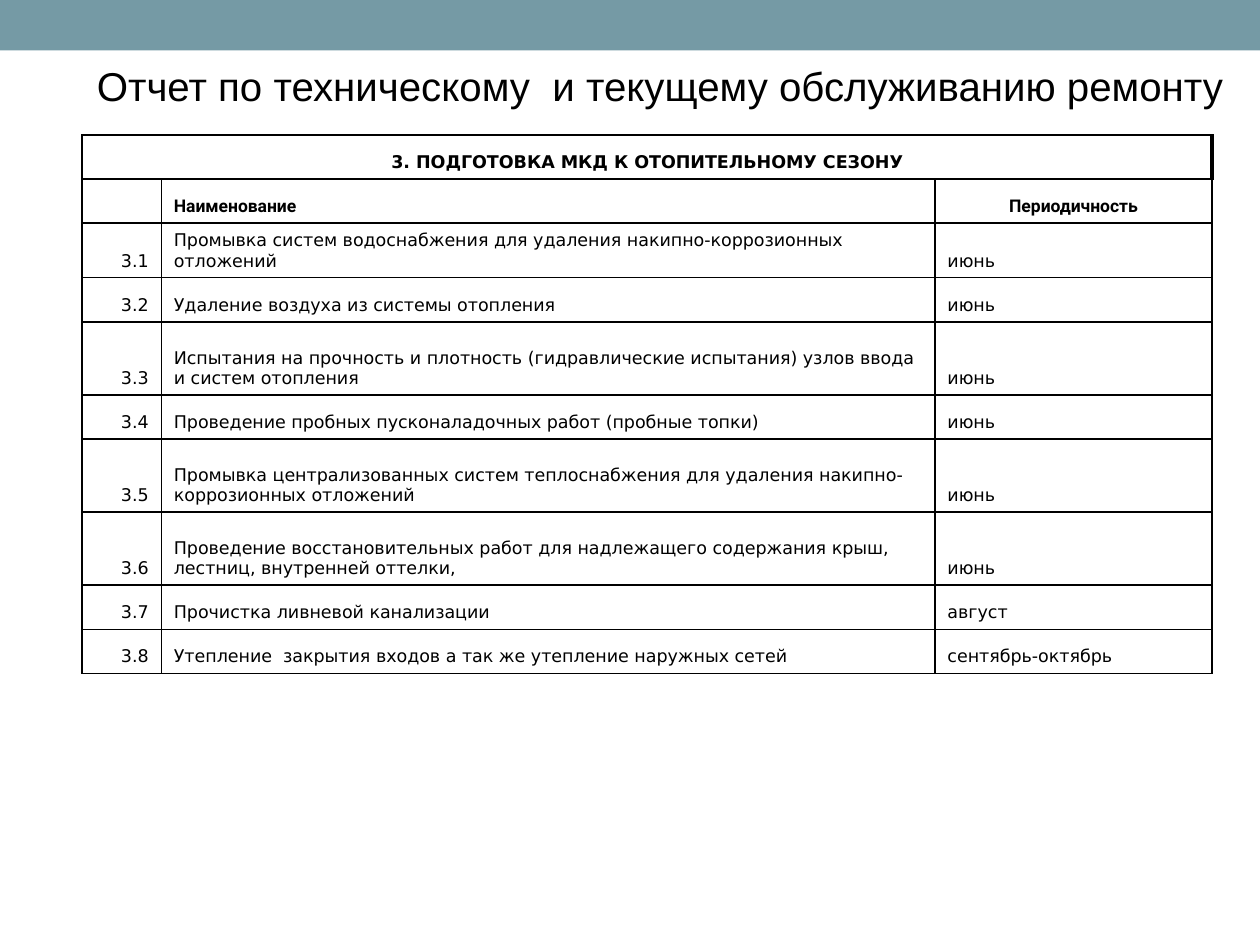
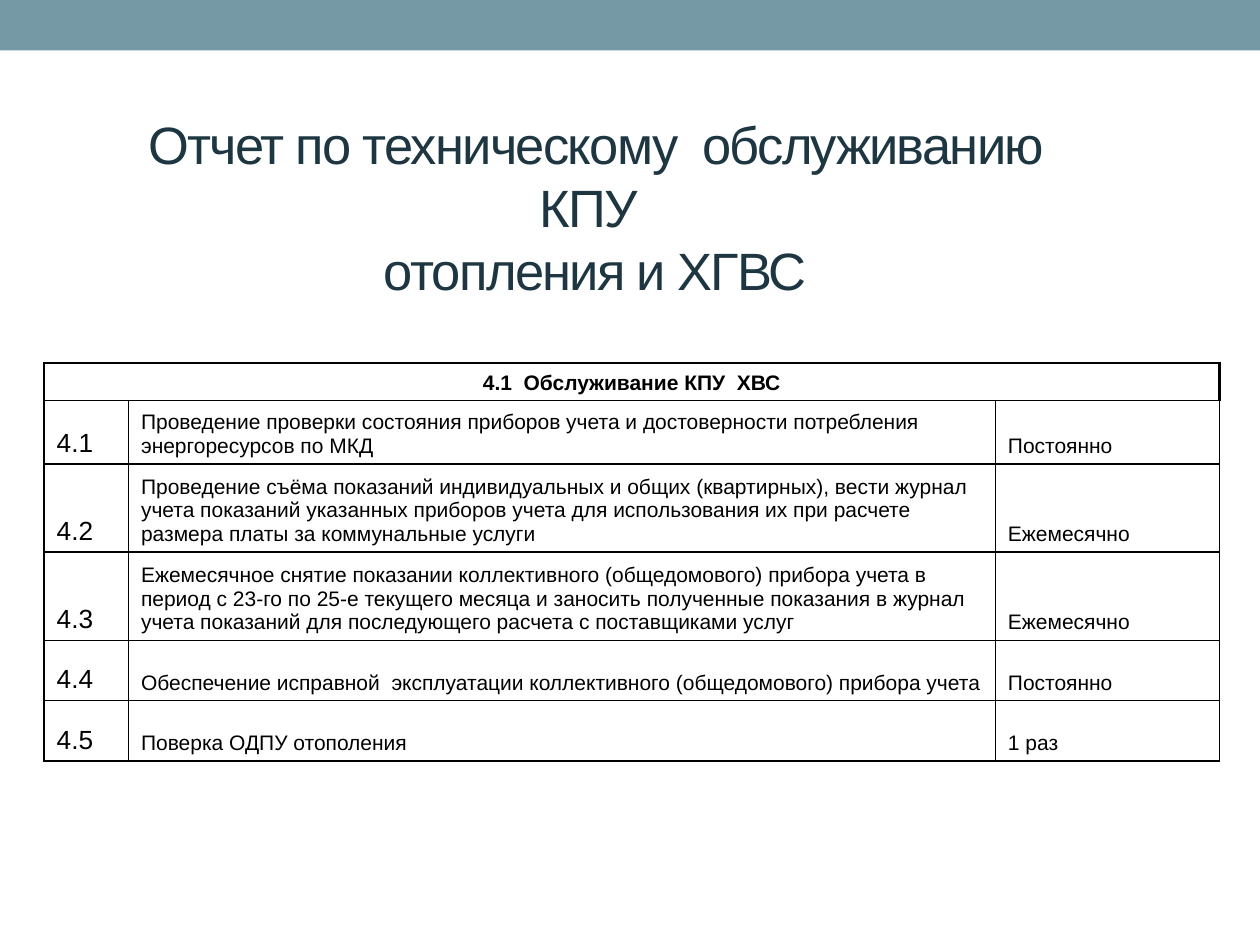
from dataclasses import dataclass

from lxml import etree
from pptx import Presentation
from pptx import util as u
from pptx.dml.color import RGBColor
from pptx.enum import shapes, text
from pptx.oxml.ns import qn

LEFT, CENTER, RIGHT = text.PP_ALIGN.LEFT, text.PP_ALIGN.CENTER, text.PP_ALIGN.RIGHT


@dataclass(frozen=True)
class Theme:
    band: str = "759AA5"
    ink: str = "000000"
    title_ink: str = "1D3641"
    sans: str = "Arial"
    table_sans: str = "DejaVu Sans"
    header_sans: str = "Roboto"
    title_small: float = 23
    title_large: float = 30
    small: float = 10
    body: float = 12
    number: float = 15
    border: float = 1
    heavy_border: float = 2.25


THEME = Theme()


class Deck:
    def __init__(self, theme):
        self.theme = theme
        self.presentation = Presentation()
        self.presentation.slide_width = u.Inches(10)
        self.presentation.slide_height = u.Inches(7.5)
        self.slide = None

    def add_slide(self):
        self.slide = self.presentation.slides.add_slide(self.presentation.slide_layouts[6])
        band = self.slide.shapes.add_shape(
            shapes.MSO_SHAPE.RECTANGLE, 0, 0, self.presentation.slide_width, u.Inches(0.4))
        band.shadow.inherit = False
        band.fill.solid()
        band.fill.fore_color.rgb = RGBColor.from_string(self.theme.band)
        band.line.fill.background()

    def set_text(self, paragraph, words, size, font, color=None, bold=False, align=LEFT,
                 spacing=None):
        paragraph.alignment = align
        if not words:
            etree.SubElement(paragraph._p, qn("a:endParaRPr"), sz=str(int(size * 100)))
            return
        paragraph.text = words
        for run in paragraph.runs:
            for name, value in {"size": u.Pt(size), "name": font, "bold": bold}.items():
                setattr(run.font, name, value)
            run.font.color.rgb = RGBColor.from_string(color or self.theme.ink)
            if spacing:
                run.font._element.set("spc", str(int(spacing * 100)))

    def add_title(self, box, words, frame_format, **style):
        frame = self.slide.shapes.add_textbox(*map(u.Inches, box)).text_frame
        for name, value in {"word_wrap": True, **frame_format}.items():
            setattr(frame, name, value)
        self.set_text(frame.paragraphs[0], words, font=self.theme.sans, **style)

    def add_borders(self, cell, right):
        properties = cell._tc.get_or_add_tcPr()
        widths = {"lnL": self.theme.border, "lnR": right,
                  "lnT": self.theme.border, "lnB": self.theme.border}
        for position, (side, width) in enumerate(widths.items()):
            line = etree.Element(qn(f"a:{side}"), w=str(int(u.Pt(width))))
            fill = etree.SubElement(line, qn("a:solidFill"))
            etree.SubElement(fill, qn("a:srgbClr"), val=self.theme.ink)
            properties.insert(position, line)

    def add_table(self, corner, widths, heights, heading, rows, styles, header_styles=None):
        left, top = map(u.Inches, corner)
        table = self.slide.shapes.add_table(
            len(heights), len(widths), left, top,
            u.Inches(sum(widths)), u.Inches(sum(heights))).table
        table.first_row = table.horz_banding = False
        for column, width in zip(table.columns, widths):
            column.width = u.Inches(width)
        for row, height in zip(table.rows, heights):
            row.height = u.Inches(height)
        table.cell(0, 0).merge(table.cell(0, len(widths) - 1))
        heading_style = {**styles[1], "bold": True, "align": CENTER}
        for row_index, row in enumerate([(heading, "", "")] + rows):
            row_styles = header_styles if header_styles and row_index == 1 else styles
            for column_index, words in enumerate(row):
                cell = table.cell(row_index, column_index)
                cell.vertical_anchor = text.MSO_ANCHOR.BOTTOM
                cell.fill.background()
                heavy = row_index == 0
                self.add_borders(cell, self.theme.heavy_border if heavy else self.theme.border)
                if not cell.is_spanned:
                    style = heading_style if heavy else row_styles[column_index]
                    self.set_text(cell.text_frame.paragraphs[0], words, **style)


def add_heating_slide(deck):
    deck.add_slide()
    deck.add_title((0.67, 0.44, 9.31, 0.88),
                   "Отчет по техническому  и текущему обслуживанию ремонту", {},
                   size=THEME.title_small)
    works = [
        ("Промывка систем водоснабжения для удаления накипно-коррозионных отложений", "июнь"),
        ("Удаление воздуха из системы отопления", "июнь"),
        ("Испытания на прочность и плотность (гидравлические испытания) узлов ввода "
         "и систем отопления", "июнь"),
        ("Проведение пробных пусконаладочных работ (пробные топки)", "июнь"),
        ("Промывка централизованных систем теплоснабжения для удаления "
         "накипно-коррозионных отложений", "июнь"),
        ("Проведение восстановительных работ для надлежащего содержания крыш, "
         "лестниц, внутренней оттелки,", "июнь"),
        ("Прочистка ливневой канализации", "август"),
        ("Утепление  закрытия входов а так же утепление наружных сетей", "сентябрь-октябрь"),
    ]
    rows = [("", "Наименование", "Периодичность")]
    rows += [(f"3.{number}", *work) for number, work in enumerate(works, 1)]
    body = {"size": THEME.small, "font": THEME.table_sans}
    header = {"size": THEME.small, "font": THEME.header_sans, "bold": True}
    single, double = 0.35, 0.58
    heights = [single] * 4 + [double, single, double, double, single, single]
    deck.add_table((0.65, 1.07), (0.63, 6.14, 2.2), heights,
                   "3. ПОДГОТОВКА МКД К ОТОПИТЕЛЬНОМУ СЕЗОНУ", rows,
                   [{**body, "align": RIGHT}, body, body],
                   [header, header, {**header, "align": CENTER}])


def add_metering_slide(deck):
    deck.add_slide()
    deck.add_title((0.67, 1.07, 8.11, 1.62),
                   "Отчет по техническому  обслуживанию КПУ \vотопления и ХГВС",
                   {"vertical_anchor": text.MSO_ANCHOR.MIDDLE, "margin_bottom": u.Inches(0.53)},
                   size=THEME.title_large, color=THEME.title_ink, align=CENTER, spacing=-1)
    works = [
        ("Проведение проверки состояния приборов учета и достоверности потребления "
         "энергоресурсов по МКД", "Постоянно"),
        ("Проведение съёма показаний индивидуальных и общих (квартирных), вести журнал "
         "учета показаний указанных приборов учета для использования их при расчете "
         "размера платы за коммунальные услуги", "Ежемесячно"),
        ("Ежемесячное снятие показании коллективного (общедомового) прибора учета в "
         "период с 23-го по 25-е текущего месяца и заносить полученные показания в журнал "
         "учета показаний для последующего расчета с поставщиками услуг", "Ежемесячно"),
        ("Обеспечение исправной  эксплуатации коллективного (общедомового) прибора учета",
         "Постоянно"),
        ("Поверка ОДПУ отополения", "1 раз"),
    ]
    rows = [(f"4.{number}", *work) for number, work in enumerate(works, 1)]
    body = {"size": THEME.body, "font": THEME.sans}
    deck.add_table((0.35, 2.88), (0.67, 6.88, 1.78), (0.3, 0.48, 0.67, 0.67, 0.48, 0.48),
                   "4.1  Обслуживание КПУ  ХВС", rows,
                   [{**body, "size": THEME.number}, body, body])


def main():
    deck = Deck(THEME)
    add_heating_slide(deck)
    add_metering_slide(deck)
    deck.presentation.save("out.pptx")


if __name__ == "__main__":
    main()
